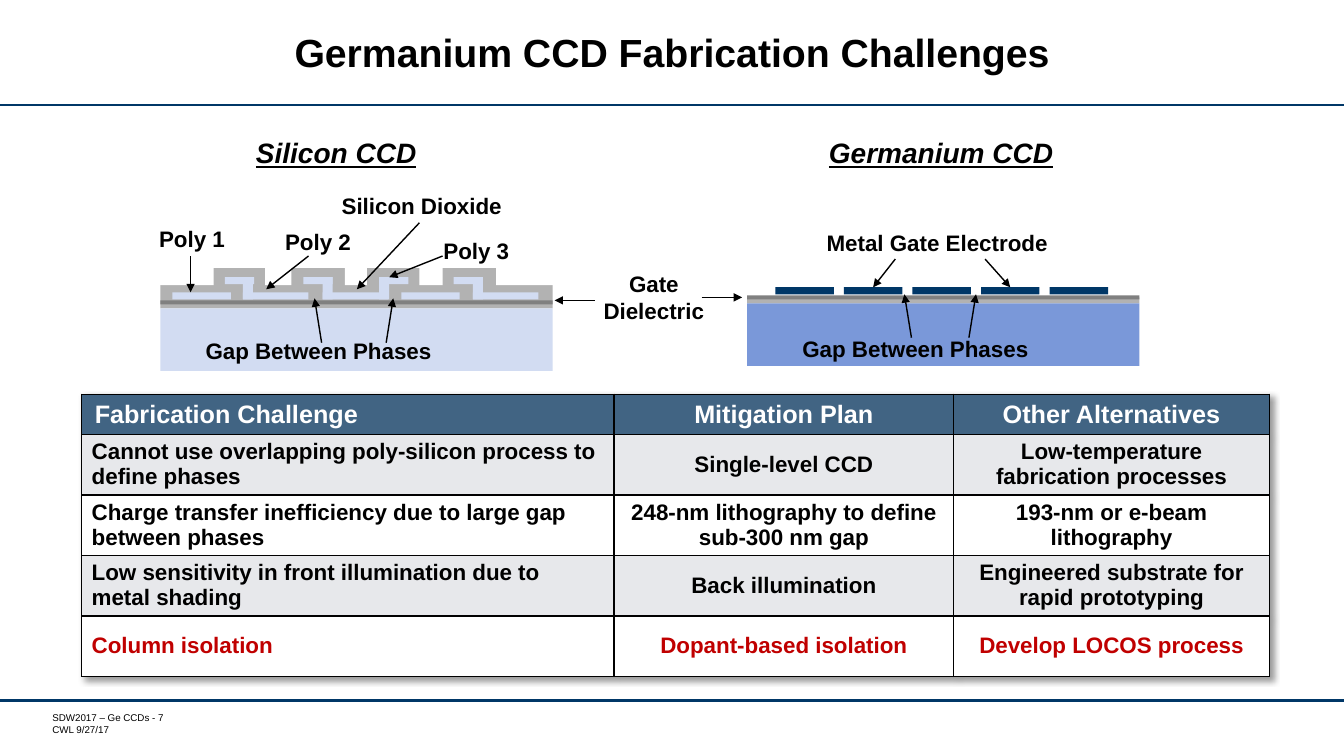
from typing import NamedTuple, Union

from lxml.etree import SubElement
from pptx import Presentation
from pptx.dml.color import RGBColor
from pptx.enum.shapes import MSO_CONNECTOR as Connector, MSO_SHAPE as Preset
from pptx.enum.text import MSO_ANCHOR as Anchor, MSO_AUTO_SIZE as AutoSize, PP_ALIGN as Align
from pptx.oxml import parse_xml
from pptx.oxml.ns import nsdecls, qn
from pptx.shapes.autoshape import Shape
from pptx.shapes.connector import Connector as Line
from pptx.shapes.shapetree import GroupShapes, SlideShapes
from pptx.slide import Slide
from pptx.table import _Cell as Cell
from pptx.text.text import _Paragraph as Paragraph
from pptx.util import Emu, Inches, Pt

Canvas = Union[SlideShapes, GroupShapes]

GRID_CELL = Inches(0.1)
GRID_COLUMNS, GRID_ROWS = 133.3, 75
FONT = "Arial"
BLACK, WHITE, RED = "000000", "FFFFFF", "C00000"
NAVY, STEEL, MIST = "003767", "416483", "E7E8EB"
OXIDE, DIELECTRIC, POLY, GERMANIUM = "B2B2B2", "808080", "D2DCF2", "7A98D9"


class Block(NamedTuple):
    """A filled rectangle on the grid."""
    column: float
    row: float
    columns: float
    rows: float
    color: str


class Label(NamedTuple):
    """A text box on the grid."""
    column: float
    row: float
    columns: float
    rows: float
    text: str
    size: float = 16
    heading: bool = False
    wrap: bool = False


class Arrow(NamedTuple):
    """A straight arrow between two grid points."""
    column: float
    row: float
    end_column: float
    end_row: float


DIE_COLUMNS, DIE_ROWS = 38.9, 6.2
SILICON_LEFT, GERMANIUM_LEFT = 15.9, 74.1
FILM = 0.7

POLY_FEET = [(17.1, 5.8), (39.8, 5.8), (24.1, 6.5), (32, 6.5), (46.9, 6.5)]
POLY_CAPS = [22.3, 30.1, 37.6, 45]
POLY_RISERS = [24.1, 32, 37.6, 46.9]
OXIDE_NOTCHES = [(15.6, 5.6), (26.3, 2.6), (34.2, 2.2), (41.6, 2.3), (49.2, 7.2)]

SILICON_BLOCKS = [
    Block(SILICON_LEFT, 26.6, DIE_COLUMNS, 4, OXIDE),
    Block(SILICON_LEFT, 30.6, DIE_COLUMNS, DIE_ROWS, POLY),
    *(Block(column, 29, columns, FILM, POLY) for column, columns in POLY_FEET),
    *(Block(column, 27.5, 2.9, FILM, POLY) for column in POLY_CAPS),
    *(Block(column, 27.5, 1, 2.2, POLY) for column in POLY_RISERS),
    Block(SILICON_LEFT, 29.8, DIE_COLUMNS, 0.4, DIELECTRIC),
    *(Block(column, 26.1, columns, 2.2, WHITE) for column, columns in OXIDE_NOTCHES),
]
SILICON_LABELS = [
    Label(14.8, 21.8, 8.6, 3.7, "Poly 1"),
    Label(27.3, 22.1, 8.6, 3.7, "Poly 2"),
    Label(43, 23, 8.6, 3.7, "Poly 3"),
    Label(19.4, 33, 24.7, 3.7, "Gap Between Phases"),
    Label(32.9, 18.6, 18.1, 3.7, "Silicon Dioxide"),
]
SILICON_ARROWS = [
    Arrow(18.9, 25.4, 18.9, 29),
    Arrow(30.6, 25.4, 26.4, 28.7),
    Arrow(43.9, 25.4, 38.6, 27.5),
    Arrow(31.9, 34, 31.2, 29.6),
    Arrow(38.3, 34, 39, 29.6),
    Arrow(41.6, 22.1, 35.4, 28.7),
]

GERMANIUM_BLOCKS = [
    Block(GERMANIUM_LEFT, 29.5, DIE_COLUMNS, 0.6, OXIDE),
    Block(GERMANIUM_LEFT, 30.1, DIE_COLUMNS, DIE_ROWS, GERMANIUM),
    Block(GERMANIUM_LEFT, 29.3, DIE_COLUMNS, 0.4, DIELECTRIC),
]
ELECTRODES = [Block(76.9 + 6.8 * index, 28.5, 5.8, FILM, NAVY) for index in range(5)]
GERMANIUM_LABELS = [
    Label(78.6, 32.8, 24.7, 3.7, "Gap Between Phases"),
    Label(81, 22.2, 24.2, 3.7, "Metal Gate Electrode"),
]
GERMANIUM_ARROWS = [Arrow(90.4, 33.5, 89.7, 29.2), Arrow(96.1, 33.5, 96.8, 29.2)]
ELECTRODE_ARROWS = {1: Arrow(88.8, 25.7, 86.6, 28.5), 3: Arrow(97.7, 25.7, 100.2, 28.5)}

SHARED_LABELS = [
    Label(24.3, 13, 18.1, 4.4, "Silicon CCD", 20, heading=True),
    Label(81.1, 13, 24.5, 4.4, "Germanium CCD", 20, heading=True),
    Label(56.2, 26.3, 17.3, 6.4, "Gate Dielectric", wrap=True),
]
GATE_ARROWS = [Arrow(69.6, 29.5, 73.6, 29.5), Arrow(59, 29.8, 55, 29.8)]

TABLE_COLUMNS = [52.8, 33.7, 31.3]
TABLE_ROWS = [4, 6, 6, 6, 6]
TABLE_TEXT = [
    ("Fabrication Challenge", "Mitigation Plan", "Other Alternatives"),
    ("Cannot use overlapping poly-silicon process to define phases", "Single-level CCD",
     "Low-temperature fabrication processes"),
    ("Charge transfer inefficiency due to large gap between phases",
     "248-nm lithography to define sub-300 nm gap", "193-nm or e-beam lithography"),
    ("Low sensitivity in front illumination due to metal shading", "Back illumination",
     "Engineered substrate for rapid prototyping"),
    ("Column isolation", "Dopant-based isolation", "Develop LOCOS process"),
]
TABLE_FILLS = [STEEL, MIST, WHITE, MIST, WHITE]
TABLE_INKS = [WHITE, BLACK, BLACK, BLACK, RED]


def grid(*cells: float) -> list[Emu]:
    """Turn grid counts into lengths."""
    return [Emu(round(count * GRID_CELL)) for count in cells]


def rgb(color: str) -> RGBColor:
    """Turn a hex string into a colour."""
    return RGBColor.from_string(color)


def add_run(paragraph: Paragraph, text: str, size: float, color: str = BLACK,
            bold: bool = True, heading: bool = False) -> None:
    """Add one formatted run."""
    run = paragraph.add_run()
    run.text = text
    font = run.font
    font.name, font.size, font.bold = FONT, Pt(size), bold
    font.color.rgb = rgb(color)
    if heading:
        font.italic = font.underline = True


def draw_block(canvas: Canvas, block: Block) -> Shape:
    """Draw a rectangle without outline."""
    shape = canvas.add_shape(Preset.RECTANGLE, *grid(*block[:4]))
    shape.shadow.inherit = False
    shape.fill.solid()
    shape.fill.fore_color.rgb = rgb(block.color)
    shape.line.fill.background()
    return shape


def draw_label(canvas: Canvas, label: Label) -> None:
    """Draw a bold text label."""
    frame = canvas.add_textbox(*grid(*label[:4])).text_frame
    frame.word_wrap = label.wrap
    frame.auto_size = AutoSize.SHAPE_TO_FIT_TEXT
    paragraph = frame.paragraphs[0]
    paragraph.alignment = Align.CENTER if label.heading or label.wrap else Align.LEFT
    add_run(paragraph, label.text, label.size, heading=label.heading)


def draw_line(canvas: Canvas, ends: Arrow, color: str, width: float) -> Line:
    """Draw a straight line without shadow."""
    line = canvas.add_connector(Connector.STRAIGHT, *grid(*ends))
    line.line.color.rgb = rgb(color)
    line.line.width = Pt(width)
    SubElement(line._element.spPr, qn("a:effectLst"))
    return line


def draw_arrow(canvas: Canvas, arrow: Arrow) -> Line:
    """Draw a thin black arrow."""
    line = draw_line(canvas, arrow, BLACK, 1)
    SubElement(line.line._get_or_add_ln(), qn("a:tailEnd"), type="triangle")
    return line


def draw_all(canvas: Canvas, blocks: list[Block], labels: list[Label],
             arrows: list[Arrow]) -> None:
    """Draw blocks, then labels, then arrows."""
    for block in blocks:
        draw_block(canvas, block)
    for label in labels:
        draw_label(canvas, label)
    for arrow in arrows:
        draw_arrow(canvas, arrow)


def draw_germanium(canvas: Canvas) -> None:
    """Draw the germanium device with arrows joined to its electrodes."""
    electrodes = [draw_block(canvas, block) for block in ELECTRODES]
    draw_all(canvas, GERMANIUM_BLOCKS, GERMANIUM_LABELS, GERMANIUM_ARROWS)
    for index, arrow in ELECTRODE_ARROWS.items():
        draw_arrow(canvas, arrow).end_connect(electrodes[index], 0)


def format_cell(cell: Cell, text: str, row: int, column: int) -> None:
    """Fill, border and write one table cell."""
    properties = cell._tc.get_or_add_tcPr()
    for side in "LRTB":
        properties.append(parse_xml(
            f'<a:ln{side} {nsdecls("a")} w="12700"><a:solidFill>'
            f'<a:srgbClr val="{BLACK}"/></a:solidFill></a:ln{side}>'))
    cell.fill.solid()
    cell.fill.fore_color.rgb = rgb(TABLE_FILLS[row])
    cell.vertical_anchor = Anchor.MIDDLE
    side_inset = 1 if row else 1.8 if column else 1.3
    cell.margin_left, cell.margin_right = grid(side_inset, side_inset)
    cell.margin_top, cell.margin_bottom = grid(*[0 if row else 0.5] * 2)
    paragraph = cell.text_frame.paragraphs[0]
    paragraph.alignment = Align.CENTER if column else Align.LEFT
    add_run(paragraph, text, 16 if row else 18, TABLE_INKS[row])


def draw_table(slide: Slide) -> None:
    """Draw the table of challenges with its soft shadow."""
    table = slide.shapes.add_table(
        len(TABLE_ROWS), len(TABLE_COLUMNS),
        *grid(8.1, 39.1, sum(TABLE_COLUMNS), sum(TABLE_ROWS))).table
    table.horz_banding = False
    table._tbl.tblPr.insert(0, parse_xml(
        f'<a:effectLst {nsdecls("a")}><a:outerShdw blurRad="50800" dist="38100" dir="2700000">'
        f'<a:srgbClr val="{BLACK}"><a:alpha val="40000"/></a:srgbClr></a:outerShdw></a:effectLst>'))
    for column, width in zip(table.columns, grid(*TABLE_COLUMNS)):
        column.width = width
    for row, height in zip(table.rows, grid(*TABLE_ROWS)):
        row.height = height
    for row, texts in enumerate(TABLE_TEXT):
        for column, text in enumerate(texts):
            format_cell(table.cell(row, column), text, row, column)


def draw_frame(slide: Slide) -> None:
    """Draw the title, the two rules and the footer."""
    for row in (10.4, 69.5):
        draw_line(slide.shapes, Arrow(0, row, GRID_COLUMNS, row), NAVY, 1.75)
    title = slide.shapes.title
    title.left, title.top, title.width, title.height = grid(13.7, 1.1, 105.9, 8.9)
    title.text_frame.vertical_anchor = Anchor.MIDDLE
    title.text_frame.auto_size = AutoSize.NONE
    paragraph = title.text_frame.paragraphs[0]
    paragraph.alignment, paragraph.line_spacing = Align.CENTER, Pt(28)
    add_run(paragraph, "Germanium CCD Fabrication Challenges", 28)
    footer = slide.shapes.add_textbox(*grid(4.7, 70.6, 15.9, 2.4)).text_frame
    footer.word_wrap = True
    footer.margin_left, footer.margin_top, footer.margin_right, footer.margin_bottom = grid(0.5, 0, 0, 0)
    add_run(footer.paragraphs[0], "SDW2017 – Ge CCDs - 7", 7, bold=False)
    add_run(footer.add_paragraph(), "CWL 9/27/17", 7, bold=False)


def main() -> None:
    """Build and save the slide."""
    presentation = Presentation()
    presentation.slide_width, presentation.slide_height = grid(GRID_COLUMNS, GRID_ROWS)
    slide = presentation.slides.add_slide(presentation.slide_layouts[5])
    draw_frame(slide)
    draw_all(slide.shapes.add_group_shape().shapes, SILICON_BLOCKS, SILICON_LABELS, SILICON_ARROWS)
    draw_germanium(slide.shapes.add_group_shape().shapes)
    draw_all(slide.shapes, [], SHARED_LABELS, GATE_ARROWS)
    draw_table(slide)
    presentation.save("out.pptx")


if __name__ == "__main__":
    main()
